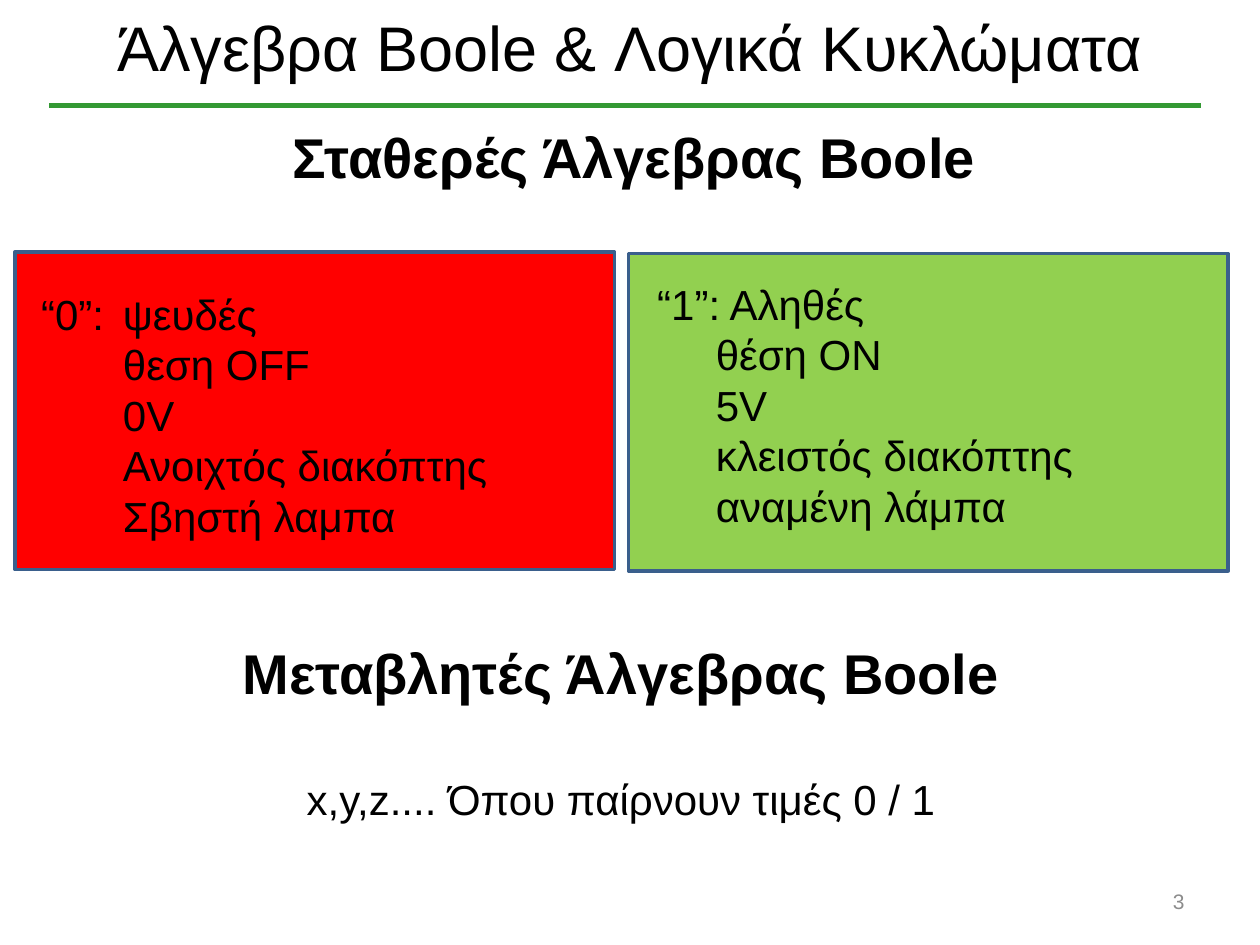
from lxml.etree import SubElement
from pptx import Presentation
from pptx.dml.color import RGBColor
from pptx.enum.shapes import MSO_CONNECTOR, MSO_SHAPE
from pptx.enum.text import MSO_ANCHOR, PP_ALIGN
from pptx.oxml.ns import qn
from pptx.util import Cm, Pt

FONT = "Arial"
LINE_HEIGHT = 1.2


def color(value):
    return RGBColor.from_string(value)


def format_paragraph(paragraph, text, size=24, bold=False, fill="000000",
                     align=PP_ALIGN.LEFT, before=0, margin=0, hanging=0):
    paragraph.alignment = align
    paragraph.line_spacing = Pt(size * LINE_HEIGHT)
    paragraph.space_before = Pt(before)
    properties = paragraph._p.get_or_add_pPr()
    properties.set("marL", str(Cm(margin)))
    properties.set("indent", str(-Cm(hanging)))
    run = paragraph.add_run()
    run.text = text
    run.font.name = FONT
    run.font.size = Pt(size)
    run.font.bold = bold
    run.font.color.rgb = color(fill)


def add_text(slide, box, lines, anchor=MSO_ANCHOR.TOP, wrap=True):
    shape = slide.shapes.add_textbox(*map(Cm, box))
    frame = shape.text_frame
    frame.word_wrap = wrap
    frame.vertical_anchor = anchor
    for index, (text, style) in enumerate(lines):
        paragraph = frame.add_paragraph() if index else frame.paragraphs[0]
        format_paragraph(paragraph, text, **style)


def add_header(slide, left, top, width, height):
    title = ("Άλγεβρα Boole & Λογικά Κυκλώματα", dict(size=36, align=PP_ALIGN.CENTER))
    add_text(slide, (left, top, width, height), [title], MSO_ANCHOR.MIDDLE)
    rule_top = Cm(top + 2.21)
    rule = slide.shapes.add_connector(
        MSO_CONNECTOR.STRAIGHT, Cm(left - 0.28), rule_top, Cm(left + width + 0.08), rule_top)
    rule.line.color.rgb = color("339933")
    rule.line.width = Pt(3)
    SubElement(rule._element.spPr, qn("a:effectLst"))


def add_constant(slide, left, top, fill, text_offset, text_width, indent, first, values):
    panel = slide.shapes.add_shape(MSO_SHAPE.RECTANGLE, Cm(left), Cm(top), Cm(12.09), Cm(6.4))
    panel.shadow.inherit = False
    panel.fill.solid()
    panel.fill.fore_color.rgb = color(fill)
    panel.line.color.rgb = color("3A5F8C")
    panel.line.width = Pt(2)
    lines = [(first, dict(margin=indent, hanging=indent))]
    lines += [(value, dict(margin=indent)) for value in values]
    offset_left, offset_top = text_offset
    add_text(slide, (left + offset_left, top + offset_top, text_width, 5.38), lines)


def add_variables(slide, left, top, width, height):
    centered = dict(align=PP_ALIGN.CENTER)
    add_text(slide, (left, top, width, height), [
        ("Μεταβλητές Άλγεβρας Boole", dict(size=32, bold=True, **centered)),
        ("x,y,z.... Όπου παίρνουν τιμές 0 / 1", dict(before=32 * LINE_HEIGHT, **centered)),
    ])


def main():
    presentation = Presentation()
    presentation.slide_width = Cm(25.4)
    presentation.slide_height = Cm(19.05)
    slide = presentation.slides.add_slide(presentation.slide_layouts[6])

    add_header(slide, 1.27, -0.08, 22.86, 2.01)
    add_text(slide, (5.64, 2.34, 14.73, 1.63),
             [("Σταθερές Άλγεβρας Boole", dict(size=32, bold=True))], wrap=False)
    add_constant(slide, 0.3, 5.08, "FF0000", (0.28, 0.61), 11.23, 1.65, "“0”:\tψευδές",
                 ["θεση OFF", "0V", "Ανοιχτός διακόπτης", "Σβηστή λαμπα"])
    add_constant(slide, 12.67, 5.11, "92D050", (0.33, 0.38), 10.39, 1.18, "“1”: Αληθές",
                 ["θέση ON", "5V", "κλειστός διακόπτης", "αναμένη λάμπα"])
    add_variables(slide, 1.27, 12.75, 22.5, 4.01)
    add_text(slide, (18.21, 17.65, 5.92, 1.02),
             [("3", dict(size=12, fill="8C8C8C", align=PP_ALIGN.RIGHT))], MSO_ANCHOR.MIDDLE)

    presentation.save("out.pptx")


if __name__ == "__main__":
    main()
